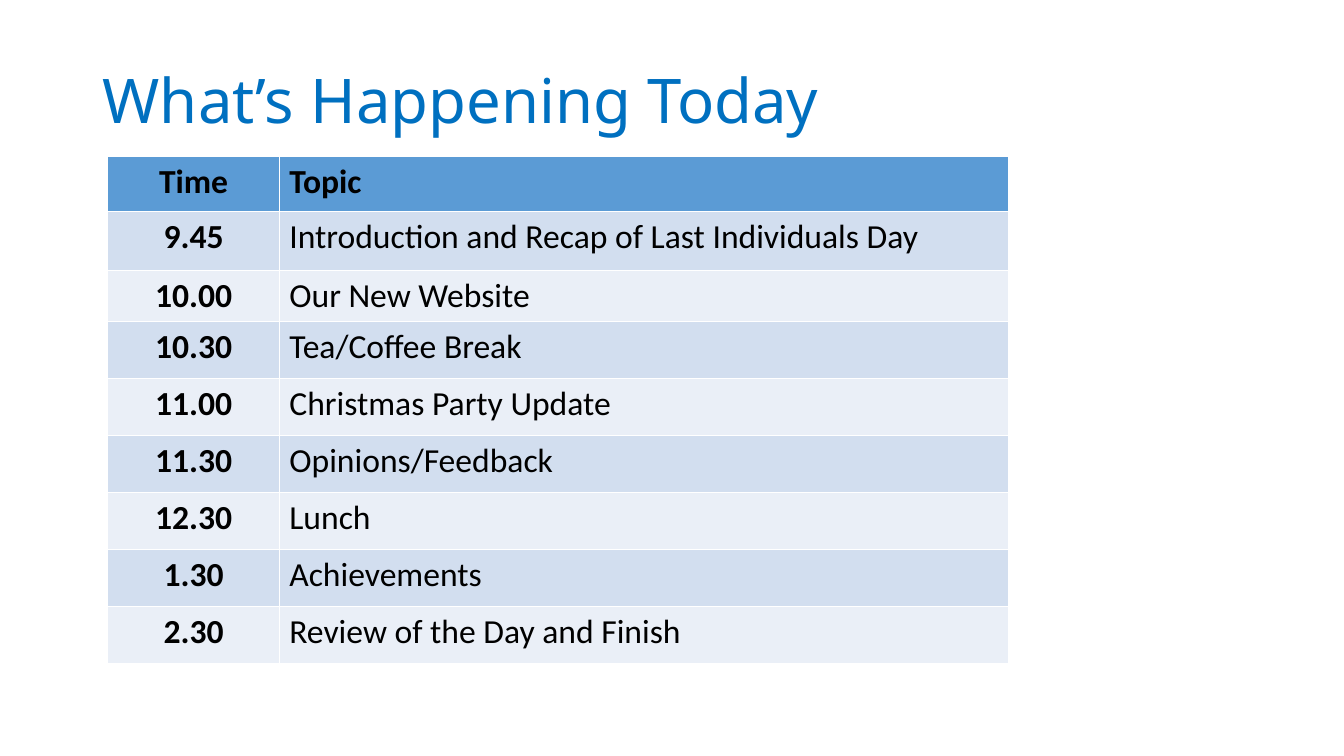
from pptx import Presentation
from pptx.dml.color import RGBColor
from pptx.enum.text import MSO_ANCHOR, PP_ALIGN
from pptx.util import Inches, Pt

TITLE = "What’s Happening Today"
AGENDA = [
    ("Time", "Topic"),
    ("9.45", "Introduction and Recap of Last Individuals Day"),
    ("10.00", "Our New Website"),
    ("10.30", "Tea/Coffee Break"),
    ("11.00", "Christmas Party Update"),
    ("11.30", "Opinions/Feedback"),
    ("12.30", "Lunch"),
    ("1.30", "Achievements"),
    ("2.30", "Review of the Day and Finish"),
]
COLUMN_WIDTHS = (1.7, 7.23)
ROW_HEIGHT = 0.565
SPECIAL_HEIGHTS = {0: 0.55, 1: 0.58, 2: 0.51}

TITLE_BLUE = RGBColor(0x00, 0x70, 0xC0)
HEADER_BLUE = RGBColor(0x5B, 0x9B, 0xD5)
BAND_DARK = RGBColor(0xD2, 0xDE, 0xEF)
BAND_LIGHT = RGBColor(0xEA, 0xEF, 0xF7)
BLACK = RGBColor(0x00, 0x00, 0x00)


def add_text(para, text, font_name, size, color, bold=False):
    span = para.add_run()
    span.text = text
    span.font.name = font_name
    span.font.size = Pt(size)
    span.font.color.rgb = color
    span.font.bold = bold


def add_title(page):
    box = page.shapes.add_textbox(Inches(0.92), Inches(0.3), Inches(11.5), Inches(1.45))
    frame = box.text_frame
    frame.word_wrap = True
    frame.vertical_anchor = MSO_ANCHOR.MIDDLE
    para = frame.paragraphs[0]
    para.line_spacing = 0.9
    add_text(para, TITLE, "Noto Sans", 44, TITLE_BLUE)


def add_agenda(page):
    heights = [SPECIAL_HEIGHTS.get(index, ROW_HEIGHT) for index in range(len(AGENDA))]
    table = page.shapes.add_table(
        len(AGENDA), len(COLUMN_WIDTHS), Inches(1.07), Inches(1.55),
        Inches(sum(COLUMN_WIDTHS)), Inches(sum(heights)),
    ).table
    for column, width in zip(table.columns, COLUMN_WIDTHS):
        column.width = Inches(width)
    for row_index, entry in enumerate(AGENDA):
        table.rows[row_index].height = Inches(heights[row_index])
        is_header = row_index == 0
        band = BAND_DARK if row_index % 2 else BAND_LIGHT
        for column_index, text in enumerate(entry):
            is_time = column_index == 0
            cell = table.cell(row_index, column_index)
            cell.fill.solid()
            cell.fill.fore_color.rgb = HEADER_BLUE if is_header else band
            para = cell.text_frame.paragraphs[0]
            para.alignment = PP_ALIGN.CENTER if is_time else PP_ALIGN.LEFT
            add_text(para, text, "Calibri", 24, BLACK, is_header or is_time)


def main():
    deck = Presentation()
    deck.slide_width = Inches(13.33)
    deck.slide_height = Inches(7.5)
    page = deck.slides.add_slide(deck.slide_layouts[6])
    add_title(page)
    add_agenda(page)
    deck.save("out.pptx")


if __name__ == "__main__":
    main()
